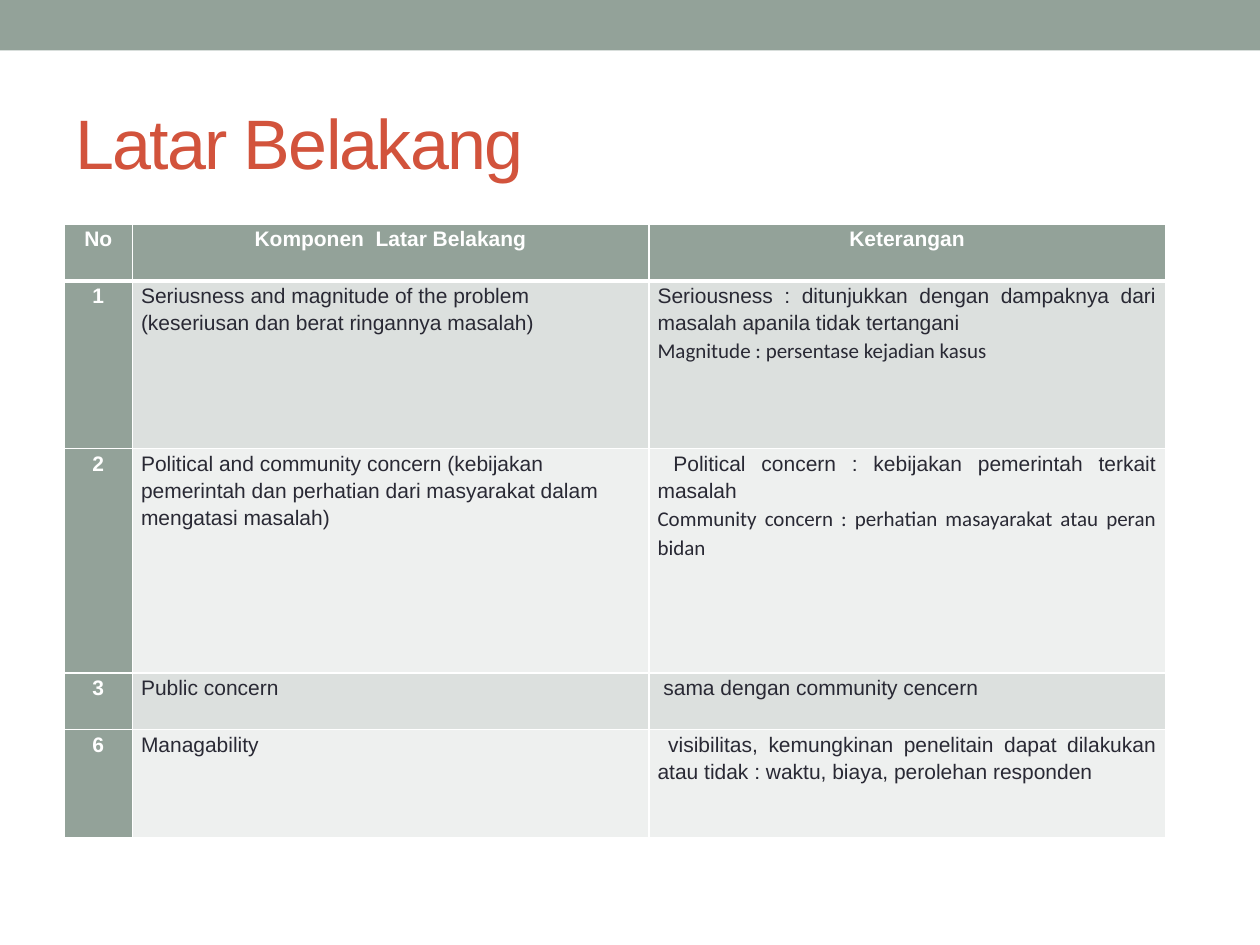
from pptx import Presentation
from pptx.dml.color import RGBColor
from pptx.enum.shapes import MSO_SHAPE
from pptx.enum.text import MSO_ANCHOR, PP_ALIGN
from pptx.oxml import parse_xml
from pptx.oxml.ns import nsdecls
from pptx.util import Inches, Pt

SAGE = RGBColor(0x93, 0xA2, 0x99)
RUST = RGBColor(0xD2, 0x53, 0x3C)
INK = RGBColor(0x29, 0x29, 0x34)
WHITE = RGBColor(0xFF, 0xFF, 0xFF)
BANDS = [RGBColor(0xDC, 0xE0, 0xDE), RGBColor(0xEE, 0xF0, 0xEF)]
LEFT, CENTER, JUST = PP_ALIGN.LEFT, PP_ALIGN.CENTER, PP_ALIGN.JUSTIFY

TITLE = "Latar Belakang"
HEADS = ["No", "Komponen  Latar Belakang", "Keterangan"]
# Number, component, alignment of the component, remarks
ITEMS = [
    ("1", "Seriusness and magnitude of the problem (keseriusan dan berat ringannya masalah)", LEFT,
     ["Seriousness : ditunjukkan dengan dampaknya dari masalah apanila tidak tertangani",
      "Magnitude : persentase kejadian kasus"]),
    ("2", "Political and community concern (kebijakan pemerintah dan perhatian dari masyarakat "
          "dalam mengatasi masalah)", LEFT,
     [" Political concern : kebijakan pemerintah terkait masalah",
      "Community concern : perhatian masayarakat atau peran bidan"]),
    ("3", "Public concern", JUST, [" sama dengan community cencern"]),
    ("6", "Managability", JUST,
     [" visibilitas, kemungkinan penelitain dapat dilakukan atau tidak : waktu, biaya, "
      "perolehan responden"]),
]
COLS = [0.54, 4.1, 4.1]
ROWS = [0.45, 1.33, 1.78, 0.45, 0.86]


def add_run(para, text, size, color, font="Arial", bold=False):
    run = para.add_run()
    run.text = text
    run.font.size = Pt(size)
    run.font.name = font
    run.font.bold = bold
    run.font.color.rgb = color
    return run


def edge(cell, base):
    """Draw white cell borders, with the bottom one base points wide."""
    props = cell._tc.get_or_add_tcPr()
    sides = [("lnL", 1), ("lnR", 1), ("lnT", 1), ("lnB", base)]
    for at, (tag, wide) in enumerate(sides):
        props.insert(at, parse_xml(
            f'<a:{tag} {nsdecls("a")} w="{Pt(wide)}"><a:solidFill>'
            f'<a:srgbClr val="{WHITE}"/></a:solidFill></a:{tag}>'))


def fill_cell(cell, lines, align, fill, color=INK, bold=False, base=1):
    cell.margin_left = cell.margin_right = Inches(0.07)
    cell.margin_top = cell.margin_bottom = 0
    cell.fill.solid()
    cell.fill.fore_color.rgb = fill
    edge(cell, base)
    frame = cell.text_frame
    for i, line in enumerate(lines):
        para = frame.add_paragraph() if i else frame.paragraphs[0]
        para.alignment = align
        para.line_spacing = 1.15
        add_run(para, line, 12, color, "Calibri" if i else "Arial", bold)


def add_title(slide):
    title = slide.shapes.title
    title.left, title.top = Inches(0.5), Inches(0.58)
    title.width, title.height = Inches(9), Inches(1.08)
    title.text_frame.vertical_anchor = MSO_ANCHOR.MIDDLE
    para = title.text_frame.paragraphs[0]
    para.alignment = LEFT
    run = add_run(para, TITLE, 40, RUST)
    run.font._element.set("spc", "-100")


def add_band(slide, width):
    band = slide.shapes.add_shape(MSO_SHAPE.RECTANGLE, 0, 0, width, Inches(0.4))
    band.shadow.inherit = False
    band.fill.solid()
    band.fill.fore_color.rgb = SAGE
    band.line.fill.background()


def add_grid(slide):
    grid = slide.shapes.add_table(
        len(ROWS), len(COLS), Inches(0.51), Inches(1.78),
        Inches(sum(COLS)), Inches(sum(ROWS))).table
    grid.first_col = True
    for col, width in zip(grid.columns, COLS):
        col.width = Inches(width)
    for row, height in zip(grid.rows, ROWS):
        row.height = Inches(height)
    for c, head in enumerate(HEADS):
        fill_cell(grid.cell(0, c), [head], CENTER, SAGE, WHITE, True, 3)
    for r, (num, part, align, notes) in enumerate(ITEMS, 1):
        tint = BANDS[(r - 1) % 2]
        fill_cell(grid.cell(r, 0), [num], CENTER, SAGE, WHITE, True)
        fill_cell(grid.cell(r, 1), [part], align, tint)
        fill_cell(grid.cell(r, 2), notes, JUST, tint)


def main():
    deck = Presentation()
    deck.slide_width, deck.slide_height = Inches(10), Inches(7.5)
    slide = deck.slides.add_slide(deck.slide_layouts[5])
    add_band(slide, deck.slide_width)
    add_title(slide)
    add_grid(slide)
    deck.save("out.pptx")


if __name__ == "__main__":
    main()
